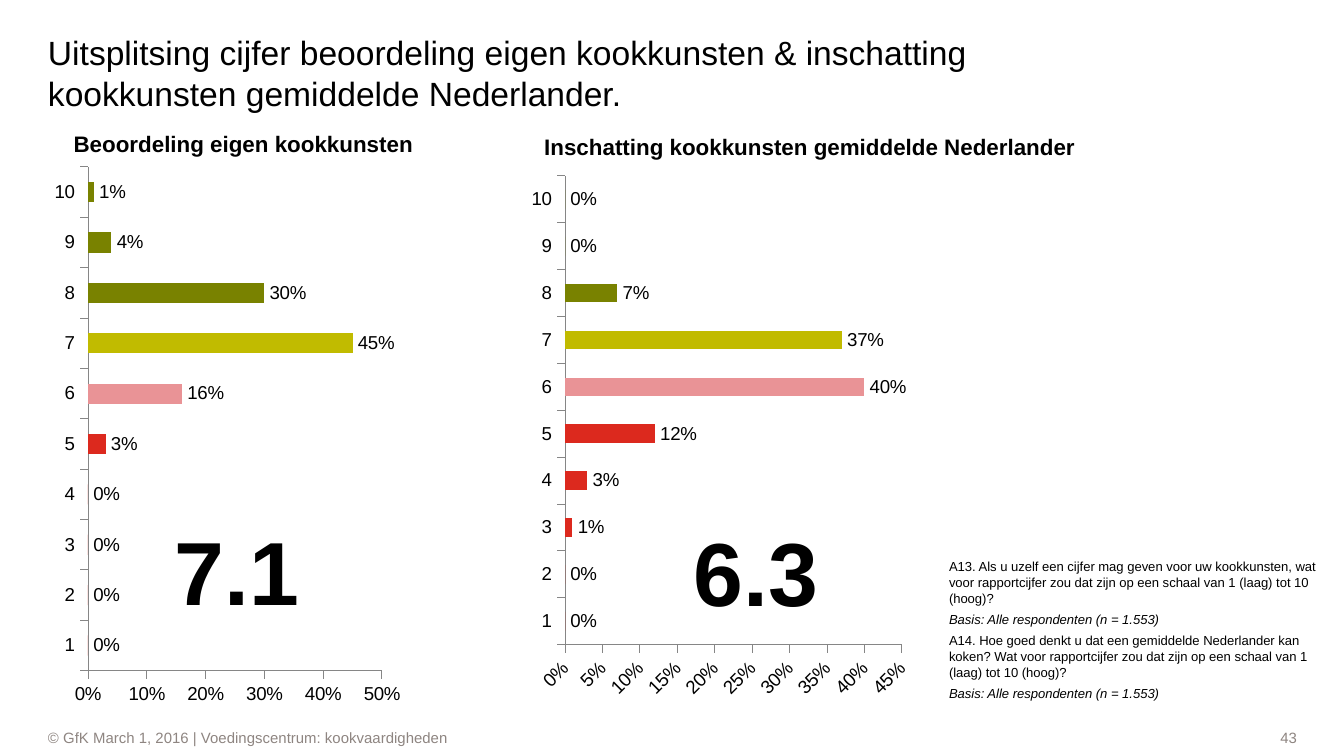
from lxml import etree
from pptx import Presentation
from pptx.chart.data import CategoryChartData
from pptx.dml.color import RGBColor
from pptx.enum.chart import XL_CHART_TYPE, XL_LABEL_POSITION, XL_TICK_MARK
from pptx.enum.shapes import MSO_SHAPE
from pptx.enum.text import MSO_ANCHOR, PP_ALIGN
from pptx.util import Emu, Pt

BAR = XL_CHART_TYPE.BAR_CLUSTERED
END = XL_LABEL_POSITION.OUTSIDE_END
OUT = XL_TICK_MARK.OUTSIDE
RECT = MSO_SHAPE.RECTANGLE
TOP, MID, LOW = MSO_ANCHOR.TOP, MSO_ANCHOR.MIDDLE, MSO_ANCHOR.BOTTOM
LEFT, MIDST, RIGHT = PP_ALIGN.LEFT, PP_ALIGN.CENTER, PP_ALIGN.RIGHT
NS = "http://schemas.openxmlformats.org/drawingml/2006/chart"
SCALE = 9144000 / 1344
FONT = "Arial"
HUES = {"text": "000000", "foot": "8E8581", "axis": "868686", "back": "FFFFFF",
        "low": "DC291E", "six": "E99396", "seven": "C1BB00", "high": "798200"}
GRADES = ["low"] * 5 + ["six", "seven"] + ["high"] * 3


def hue(name):
    return RGBColor.from_string(HUES[name])


def write(box, lines, size, bold=False, color="text", align=LEFT, anchor=TOP, back=None):
    place = [Emu(int(n * SCALE)) for n in box]
    if back:
        shape = slide.shapes.add_shape(RECT, *place)
        shape.shadow.inherit = False
        shape.fill.solid()
        shape.fill.fore_color.rgb = hue(back)
        shape.line.fill.background()
    else:
        shape = slide.shapes.add_textbox(*place)
    frame = shape.text_frame
    frame.word_wrap = True
    frame.vertical_anchor = anchor
    frame.margin_left = frame.margin_right = frame.margin_top = frame.margin_bottom = 0
    for i, line in enumerate(lines):
        para = frame.paragraphs[0] if i == 0 else frame.add_paragraph()
        para.text = line
        para.alignment = align
        if i:
            para.space_before = Pt(3)
        para.font.name = FONT
        para.font.size = Pt(size)
        para.font.bold = bold
        para.font.italic = line.startswith("Basis")
        para.font.color.rgb = hue(color)


deck = Presentation()
deck.slide_width = Emu(int(1344 * SCALE))
deck.slide_height = Emu(int(756 * SCALE))
slide = deck.slides.add_slide(deck.slide_layouts[6])

write((1106, 727, 191, 21), ["43"], 8, color="foot", align=RIGHT, anchor=MID, back="back")
write((48, 727, 1037, 21), ["© GfK March 1, 2016 | Voedingscentrum: kookvaardigheden"], 8,
      color="foot", anchor=MID, back="back")
write((48, 28, 942, 85), ["Uitsplitsing cijfer beoordeling eigen kookkunsten & inschatting "
                          "kookkunsten gemiddelde Nederlander."], 18, anchor=LOW)

charts = [
    ((47, 156, 360, 560), (88, 167, 294, 504), 0.5, 0.1, 0,
     [0, 0, 0, 0, 0.03, 0.16, 0.45, 0.3, 0.04, 0.01]),
    ((524, 165, 394, 546), (565, 176, 337, 469), 0.45, 0.05, -45,
     [0, 0, 0.01, 0.03, 0.12, 0.4, 0.37, 0.07, 0, 0]),
]
for box, plot, top, step, turn, shares in charts:
    data = CategoryChartData(number_format="0%")
    data.categories = [str(n) for n in range(1, 11)]
    data.add_series("Series 1", shares)
    chart = slide.shapes.add_chart(BAR, *[Emu(int(n * SCALE)) for n in box], data).chart
    chart.has_legend = False
    chart.has_title = False
    chart.font.name = FONT
    chart.font.size = Pt(10)
    chart.font.color.rgb = hue("text")

    bars = chart.plots[0]
    bars.gap_width = 150
    bars.vary_by_categories = False
    bars.has_data_labels = True
    tags = bars.data_labels
    tags.show_value = True
    tags.number_format = "0%"
    tags.number_format_is_linked = False
    tags.position = END
    for i, grade in enumerate(GRADES):
        fill = bars.series[0].points[i].format.fill
        fill.solid()
        fill.fore_color.rgb = hue(grade)

    scale = chart.value_axis
    for axis in (chart.category_axis, scale):
        axis.has_major_gridlines = False
        axis.major_tick_mark = OUT
        axis.format.line.color.rgb = hue("axis")
        axis.format.line.width = Pt(0.5)
    scale.minimum_scale = 0
    scale.maximum_scale = top
    scale.major_unit = step
    scale.tick_labels.number_format = "0%"
    scale.tick_labels.number_format_is_linked = False
    if turn:
        scale.tick_labels.font.size = Pt(10)
        scale._element.txPr.bodyPr.set("rot", str(turn * 60000))

    area = chart._chartSpace.chart.plotArea
    for old in area.findall(f"{{{NS}}}layout"):
        area.remove(old)
    layout = etree.Element(f"{{{NS}}}layout")
    area.insert(0, layout)
    manual = etree.SubElement(layout, f"{{{NS}}}manualLayout")
    parts = [("layoutTarget", "inner"), ("xMode", "edge"), ("yMode", "edge"),
             ("x", (plot[0] - box[0]) / box[2]), ("y", (plot[1] - box[1]) / box[3]),
             ("w", plot[2] / box[2]), ("h", plot[3] / box[3])]
    for tag, val in parts:
        etree.SubElement(manual, f"{{{NS}}}{tag}").set("val", str(val))

write((175, 516, 202, 109), ["7.1"], 48, bold=True)
write((694, 517, 202, 109), ["6.3"], 48, bold=True)
write((58, 130, 371, 27), ["Beoordeling eigen kookkunsten"], 12, bold=True, align=MIDST)
write((474, 133, 672, 27), ["Inschatting kookkunsten gemiddelde Nederlander"], 12, bold=True,
      align=MIDST)

base = "Basis: Alle respondenten (n = 1.553)"
write((949, 559, 377, 142), [
    "A13. Als u uzelf een cijfer mag geven voor uw kookkunsten, wat voor rapportcijfer "
    "zou dat zijn op een schaal van 1 (laag) tot 10 (hoog)?",
    base,
    "A14. Hoe goed denkt u dat een gemiddelde Nederlander kan koken? Wat voor rapportcijfer "
    "zou dat zijn op een schaal van 1 (laag) tot 10 (hoog)?",
    base,
], 7)

deck.save("out.pptx")
